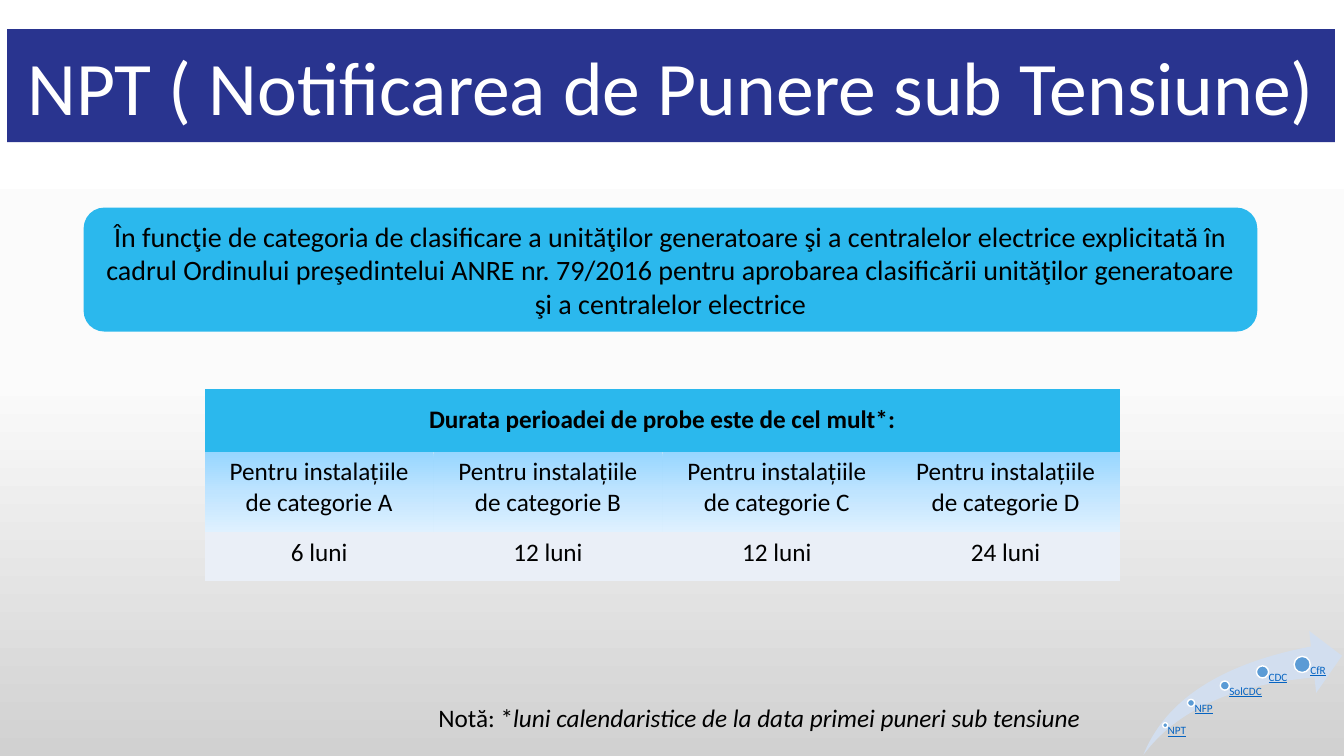
import pptx
import pptx.util
import pptx.oxml
import pptx.oxml.ns
import pptx.dml.color
import pptx.enum.shapes
import pptx.enum.text

WIDTH, HEIGHT = 13.33, 7.5
SKY = "2BB8ED"
PAGE_STOPS = [(0, "FFFFFF"), (50, "FBFBFB"), (100, "D1D1D1")]
CATEGORY_STOPS = [(0, "96D6FF"), (50, "BFE4FF"), (100, "DFF1FF")]
PERIODS = {"A": "6 luni", "B": "12 luni", "C": "12 luni", "D": "24 luni"}
STEPS = [
    ("NPT", 0.11, 0.76, 0.05, 0.26),
    ("NFP", 0.24, 0.58, 0.07, 0.33),
    ("SolCDC", 0.41, 0.44, 0.09, 0.38),
    ("CDC", 0.6, 0.33, 0.12, 0.39),
    ("CfR", 0.8, 0.27, 0.16, 0.39),
]
SHAPE = pptx.enum.shapes.MSO_SHAPE
CENTER = pptx.enum.text.PP_ALIGN.CENTER
MIDDLE = pptx.enum.text.MSO_ANCHOR.MIDDLE


def color(value):
    return pptx.dml.color.RGBColor.from_string(value)


def inches(box):
    return [pptx.util.Inches(length) for length in box]


def write(para, text, size=18, ink="000000", align=None, bold=False, italic=False, underline=False):
    para.alignment = align
    span = para.add_run()
    span.text = text
    font = span.font
    font.name, font.size = "Calibri", pptx.util.Pt(size)
    font.bold, font.italic, font.underline = bold, italic, underline
    font.color.rgb = color(ink)


def paint(shape, fill):
    shape.fill.solid()
    shape.fill.fore_color.rgb = color(fill)


def paint_gradient(owner, holder, stops):
    paint(owner, stops[0][1])
    marks = "".join(
        f'<a:gs pos="{place * 1000}"><a:srgbClr val="{value}"/></a:gs>' for place, value in stops
    )
    gradient = pptx.oxml.parse_xml(
        f'<a:gradFill {pptx.oxml.ns.nsdecls("a")} rotWithShape="1"><a:gsLst>{marks}</a:gsLst>'
        '<a:lin ang="5400000" scaled="0"/></a:gradFill>'
    )
    holder.replace(holder.find(pptx.oxml.ns.qn("a:solidFill")), gradient)


def add_figure(shapes, kind, box, fill):
    figure = shapes.add_shape(kind, *inches(box))
    figure.shadow.inherit = False
    paint(figure, fill)
    figure.line.fill.background()
    return figure


def add_title(page, box):
    title = page.shapes.title
    title.left, title.top, title.width, title.height = inches(box)
    title.element.spPr.append(pptx.oxml.parse_xml(
        f'<a:prstGeom {pptx.oxml.ns.nsdecls("a")} prst="roundRect"><a:avLst/></a:prstGeom>'
    ))
    paint(title, "29348F")
    frame = title.text_frame
    frame.auto_size = pptx.enum.text.MSO_AUTO_SIZE.NONE
    frame.vertical_anchor = MIDDLE
    write(frame.paragraphs[0], "NPT ( Notificarea de Punere sub Tensiune)", size=54, ink="FFFFFF", align=CENTER)


def add_basis(page, box):
    panel = add_figure(page.shapes, SHAPE.ROUNDED_RECTANGLE, box, SKY)
    frame = panel.text_frame
    frame.word_wrap = True
    frame.vertical_anchor = MIDDLE
    write(
        frame.paragraphs[0],
        "În funcţie de categoria de clasificare a unităţilor generatoare şi a centralelor electrice "
        "explicitată în cadrul Ordinului preşedintelui ANRE nr. 79/2016 pentru aprobarea clasificării "
        "unităţilor generatoare şi a centralelor electrice",
        size=20, align=CENTER,
    )


def add_periods(page, box):
    frame = page.shapes.add_table(3, len(PERIODS), *inches(box))
    table = frame.table
    style = next(frame.element.iter(pptx.oxml.ns.qn("a:tableStyleId")))
    style.text = "{2D5ABB26-0587-4C30-8999-92F81FD0307C}"
    for row, height in zip(table.rows, (0.62, 0.8, 0.48)):
        row.height = pptx.util.Inches(height)
    header = table.cell(0, 0)
    header.merge(table.cell(0, len(PERIODS) - 1))
    header.vertical_anchor = MIDDLE
    paint(header, SKY)
    write(header.text_frame.paragraphs[0], "Durata perioadei de probe este de cel mult*:", align=CENTER, bold=True)
    for column, (category, period) in enumerate(PERIODS.items()):
        label, value = table.cell(1, column), table.cell(2, column)
        paint_gradient(label, label._tc.get_or_add_tcPr(), CATEGORY_STOPS)
        paint(value, "EAEFF7")
        write(label.text_frame.paragraphs[0], f"Pentru instalațiile de categorie {category}", align=CENTER)
        write(value.text_frame.paragraphs[0], period, align=CENTER)


def add_note(page, box):
    note = page.shapes.add_textbox(*inches(box))
    note.text_frame.word_wrap = True
    para = note.text_frame.paragraphs[0]
    write(para, "Notă: *")
    write(para, "luni calendaristice de la data primei puneri sub tensiune", italic=True)


def add_steps(page, box):
    left, top, width, height = box
    shapes = page.shapes.add_group_shape().shapes
    arrow = add_figure(shapes, SHAPE.SWOOSH_ARROW, box, "D2DEEF")
    arrow.adjustments[0] = arrow.adjustments[1] = 0.25
    for name, across, down, size, label_width in STEPS:
        x, y = left + across * width, top + down * height
        dot = add_figure(shapes, SHAPE.OVAL, (x - size / 2, y - size / 2, size, size), "5B9BD5")
        dot.line.color.rgb = color("FFFFFF")
        dot.line.width = pptx.util.Pt(1)
        label = shapes.add_textbox(*inches((x, y, label_width, top + height - y)))
        frame = label.text_frame
        frame.margin_left = pptx.util.Inches(size / 2)
        frame.margin_top = frame.margin_right = frame.margin_bottom = 0
        para = frame.paragraphs[0]
        para.line_spacing = 0.9
        write(para, name, size=8, ink="0563C1", underline=True)


def main():
    deck = pptx.Presentation()
    deck.slide_width, deck.slide_height = inches((WIDTH, HEIGHT))
    page = deck.slides.add_slide(deck.slide_layouts.get_by_name("Title Only"))
    background = page.background
    background.fill.solid()
    holder = next(page.element.iter(pptx.oxml.ns.qn("p:bgPr")))
    paint_gradient(background, holder, PAGE_STOPS)
    add_title(page, (0.07, 0.29, 13.17, 1.12))
    add_basis(page, (0.83, 2.06, 11.64, 1.23))
    add_steps(page, (11.34, 6.26, 1.97, 1.23))
    add_note(page, (4.25, 6.92, 6.85, 0.4))
    add_periods(page, (2.03, 3.86, 9.08, 1.9))
    deck.save("out.pptx")


if __name__ == "__main__":
    main()
